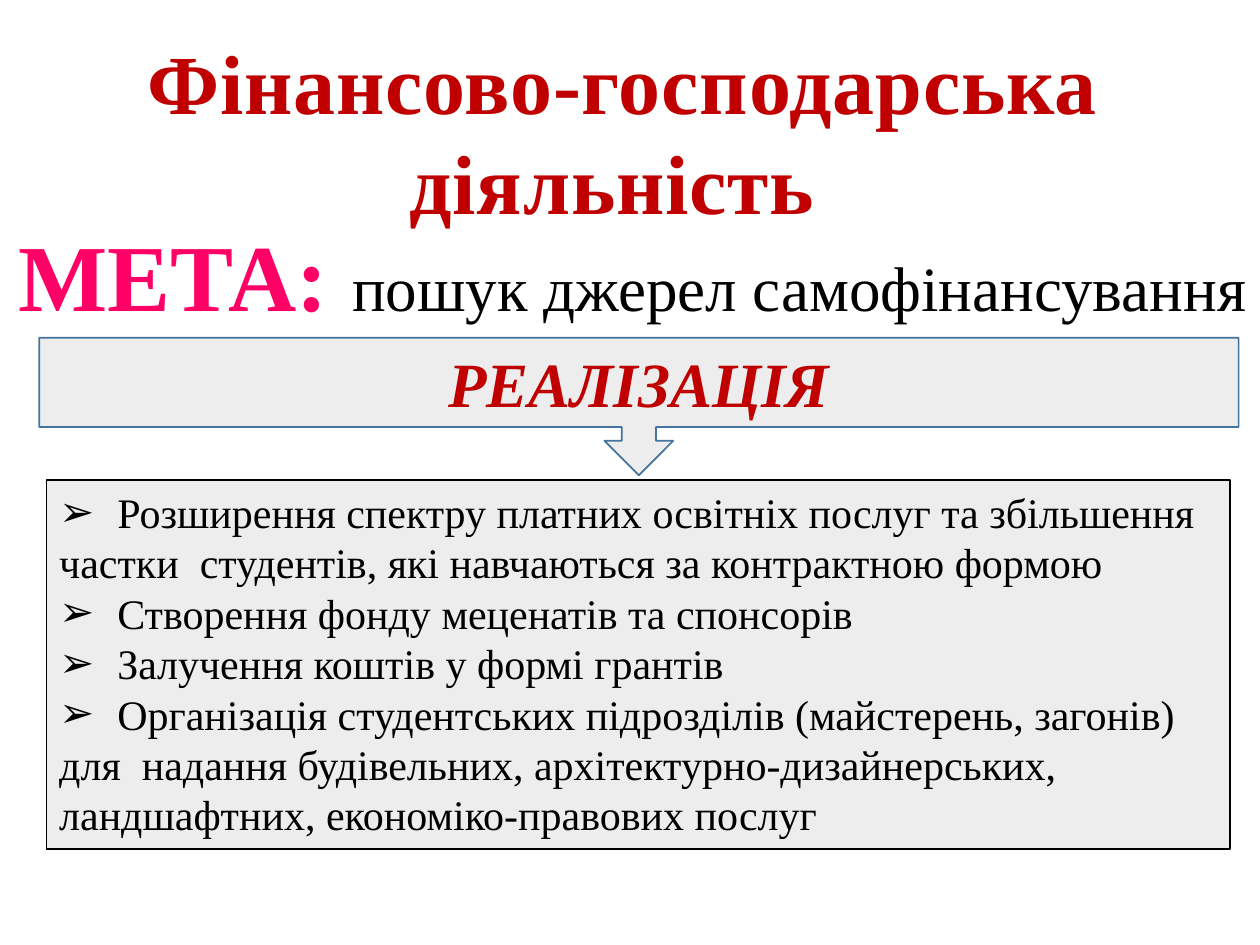
"""Build a slide on financial and economic activity."""
from lxml.etree import SubElement
from pptx import Presentation
from pptx.dml.color import RGBColor as Rgb
from pptx.enum.shapes import MSO_SHAPE as Form
from pptx.enum.text import MSO_ANCHOR as Anchor, MSO_AUTO_SIZE as Fit, PP_ALIGN as Align
from pptx.oxml.ns import qn
from pptx.util import Cm, Pt

HUES = {"red": "C00000", "pink": "FF0066", "black": "000000",
        "gray": "EDEDED", "blue": "43739E"}
GOALS = [
    (True, "Розширення спектру платних освітніх послуг та збільшення"),
    (False, "частки  студентів, які навчаються за контрактною формою"),
    (True, "Створення фонду меценатів та спонсорів"),
    (True, "Залучення коштів у формі грантів"),
    (True, "Організація студентських підрозділів (майстерень, загонів)"),
    (False, "для  надання будівельних, архітектурно-дизайнерських,"),
    (False, "ландшафтних, економіко-правових послуг"),
]


class Deck:
    """Hold the style and the current slide."""
    face = "Times New Roman"

    def __init__(self):
        self.prs = Presentation()
        self.prs.slide_width, self.prs.slide_height = Cm(25.4), Cm(19.05)
        self.slide = self.prs.slides.add_slide(self.prs.slide_layouts[1])

    def hue(self, name):
        return Rgb.from_string(HUES[name])

    def style(self, run, size, hue, bold=False, slant=False):
        font = run.font
        font.name, font.size = self.face, Pt(size)
        font.bold, font.italic = bold, slant
        font.color.rgb = self.hue(hue)

    def place(self, shape, *box):
        shape.left, shape.top, shape.width, shape.height = map(Cm, box)

    def paint(self, shape, edge):
        shape.fill.solid()
        shape.fill.fore_color.rgb = self.hue("gray")
        shape.line.color.rgb = self.hue(edge)
        shape.line.width = Pt(1)

    def title(self, text, *box):
        shape = self.slide.shapes.title
        self.place(shape, *box)
        frame = shape.text_frame
        frame.text = text
        frame.auto_size, frame.vertical_anchor = Fit.NONE, Anchor.TOP
        para = frame.paragraphs[0]
        para.alignment = Align.CENTER
        run = para.runs[0]
        self.style(run, 48, "red", bold=True)
        run.font._element.set("spc", "50")

    def label(self, parts, *box):
        frame = self.slide.shapes.add_textbox(*map(Cm, box)).text_frame
        frame.word_wrap = True
        for text, size, hue, bold in parts:
            run = frame.paragraphs[0].add_run()
            run.text = text
            self.style(run, size, hue, bold)

    def callout(self, text, *box):
        shape = self.slide.shapes.add_shape(Form.DOWN_ARROW_CALLOUT, *map(Cm, box))
        shape.shadow.inherit = False
        self.paint(shape, "blue")
        frame = shape.text_frame
        frame.text = text
        frame.vertical_anchor = Anchor.MIDDLE
        para = frame.paragraphs[0]
        para.alignment = Align.CENTER
        self.style(para.runs[0], 36, "red", bold=True, slant=True)

    def bullet(self, para, marked):
        props = para._p.get_or_add_pPr()
        gap = Cm(1.17) if marked else 0
        props.set("marL", str(gap))
        props.set("indent", str(-gap))
        if marked:
            SubElement(props, qn("a:buChar")).set("char", "➢")
        else:
            SubElement(props, qn("a:buNone"))

    def body(self, items, *box):
        shape = self.slide.placeholders[1]
        self.place(shape, *box)
        self.paint(shape, "black")
        frame = shape.text_frame
        frame.text = "\n".join(text for _, text in items)
        frame.auto_size, frame.word_wrap = Fit.NONE, False
        for para, (marked, _) in zip(frame.paragraphs, items):
            para.alignment = Align.LEFT
            para.space_before = Pt(0)
            self.bullet(para, marked)
            self.style(para.runs[0], 24, "black")


def main():
    deck = Deck()
    deck.title("Фінансово-господарська діяльність ", 0.79, 0.48, 23.55, 4.37)
    deck.label([("МЕТА: ", 54, "pink", True),
                ("пошук джерел самофінансування", 36, "black", False)],
               0.12, 4.25, 26.14, 2.57)
    deck.callout("РЕАЛІЗАЦІЯ", 0.79, 6.81, 24.18, 2.77)
    deck.body(GOALS, 0.94, 9.68, 23.85, 7.44)
    deck.prs.save("out.pptx")


if __name__ == "__main__":
    main()
